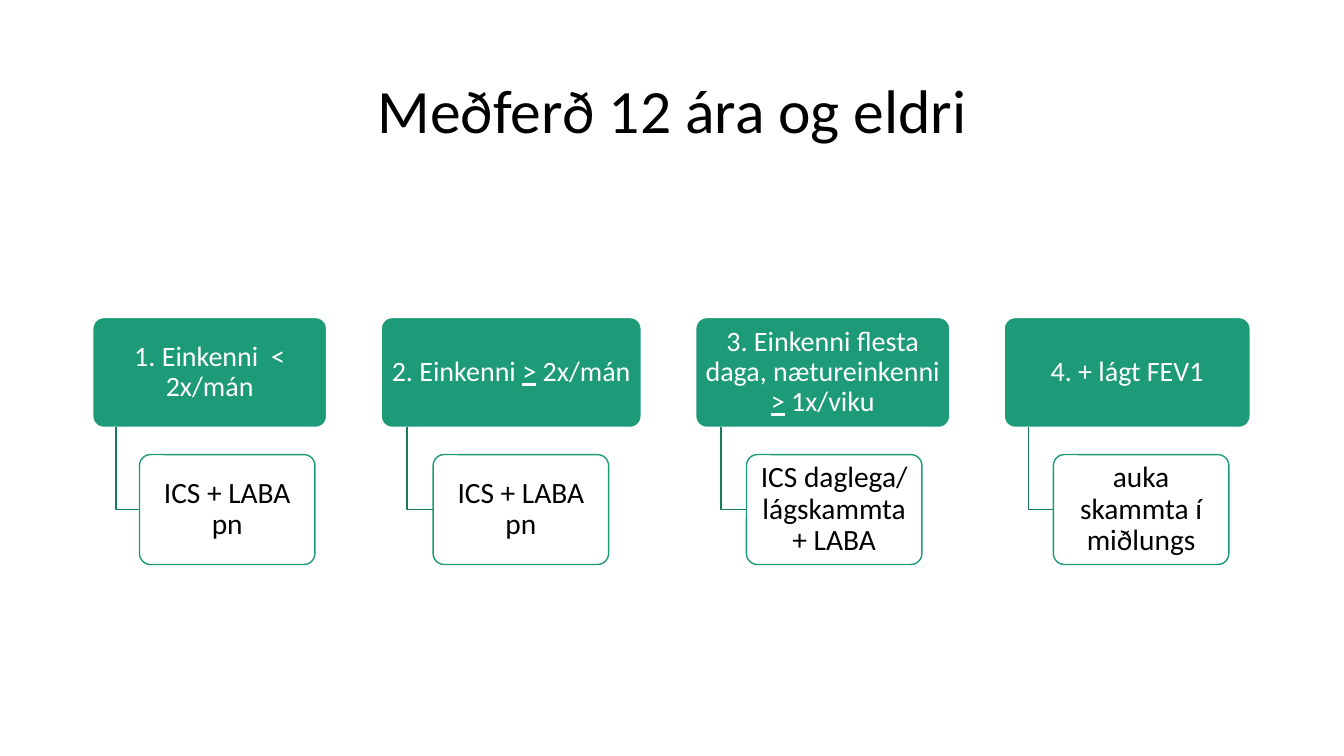
from pptx import Presentation
from pptx import util as u
from pptx.dml.color import RGBColor
from pptx.enum import shapes, text

COLORS = {"green": "1D9A78", "dark": "177B60", "white": "FFFFFF", "black": "000000"}
FORMATS = {
    "title": {"size": u.Pt(44), "name": "Calibri"},
    "step": {"size": u.Pt(20), "name": "Calibri"},
    "treatment": {"size": u.Pt(21), "name": "Calibri"},
}


def rgb(name):
    return RGBColor.from_string(COLORS[name])


class Deck:
    """Holds the style and the current slide."""

    def __init__(self, prs):
        self.s = prs.slides.add_slide(prs.slide_layouts[6])

    def label(self, sp, runs, fmt, color, inset):
        tf = sp.text_frame
        margins = dict(zip(("margin_left", "margin_top", "margin_right", "margin_bottom"),
                           map(u.Inches, inset * 2)))
        frame = {"word_wrap": True, "vertical_anchor": text.MSO_ANCHOR.MIDDLE, **margins}
        for key, value in frame.items():
            setattr(tf, key, value)
        p = tf.paragraphs[0]
        p.alignment = text.PP_ALIGN.CENTER
        p.line_spacing = 0.9
        for words in runs:
            r = p.add_run()
            r.text = words
            for key, value in FORMATS[fmt].items():
                setattr(r.font, key, value)
            r.font.color.rgb = rgb(color)
            if words == ">":
                r.font.underline = True

    def title(self, words, x, y, w, h):
        sp = self.s.shapes.add_textbox(*map(u.Inches, (x, y, w, h)))
        self.label(sp, [words], "title", "black", (0.1, 0.05))

    def box(self, runs, x, y, w, h, fmt, fill, line, color):
        sp = self.s.shapes.add_shape(shapes.MSO_SHAPE.ROUNDED_RECTANGLE,
                                     *map(u.Inches, (x, y, w, h)))
        sp.adjustments[0] = 0.1
        sp.shadow.inherit = False
        sp.fill.solid()
        sp.fill.fore_color.rgb = rgb(fill)
        sp.line.color.rgb = rgb(line)
        sp.line.width = u.Pt(1)
        self.label(sp, runs, fmt, color, (0.04, 0.03))

    def elbow(self, x, y, x2, y2):
        start, corner, end = [(u.Inches(a), u.Inches(b))
                              for a, b in ((x, y), (x, y2), (x2, y2))]
        fb = self.s.shapes.build_freeform(*start)
        fb.add_line_segments([corner, end], close=False)
        sp = fb.convert_to_shape()
        sp.shadow.inherit = False
        sp.fill.background()
        sp.line.color.rgb = rgb("dark")
        sp.line.width = u.Pt(1)


def main():
    prs = Presentation()
    prs.slide_width, prs.slide_height = u.Inches(13.33), u.Inches(7.5)
    deck = Deck(prs)
    deck.title("Meðferð 12 ára og eldri", 0.92, 0.4, 11.5, 1.45)

    # Steps: width, runs of the symptom box, treatment
    steps = [
        (2.32, ["1. Einkenni  < 2x/mán"], "ICS + LABA pn"),
        (2.58, ["2. Einkenni ", ">", " 2x/mán"], "ICS + LABA pn"),
        (2.52, ["3. Einkenni flesta daga, nætureinkenni ", ">", " 1x/viku"],
         "ICS daglega/ lágskammta + LABA"),
        (2.44, ["4. + lágt FEV1"], "auka skammta í miðlungs"),
    ]
    x, top, height, child_top, child_w, gap = 0.92, 3.15, 1.09, 4.51, 1.74, 0.54
    for w, symptoms, treatment in steps:
        # Treatment hangs from the symptom box at a tenth of its width
        child_x = x + 0.2 * w
        deck.box(symptoms, x, top, w, height, "step", "green", "white", "white")
        deck.elbow(x + 0.1 * w, top + height, child_x, child_top + height / 2)
        deck.box([treatment], child_x, child_top, child_w, height,
                 "treatment", "white", "green", "black")
        x += w + gap

    prs.save("out.pptx")


if __name__ == "__main__":
    main()
